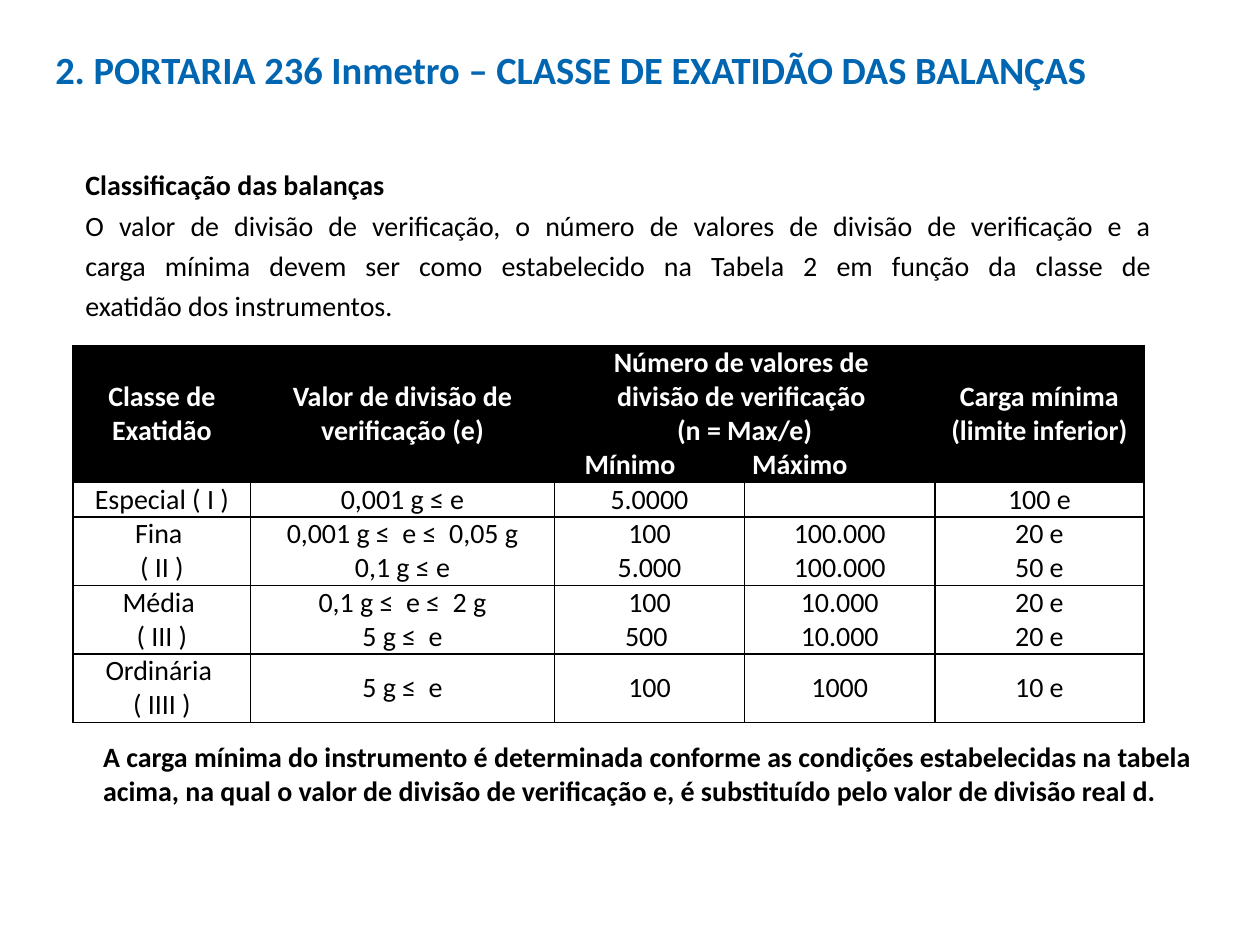
from typing import NamedTuple
from lxml import etree
from pptx import Presentation, util as u
from pptx.dml.color import RGBColor
from pptx.enum import text as t
from pptx.oxml import ns

BLACK, WHITE, BLUE = "000000", "FFFFFF", "0066B2"
LEFT, MID, JUST = t.PP_ALIGN.LEFT, t.PP_ALIGN.CENTER, t.PP_ALIGN.JUSTIFY
TOP, CORE = t.MSO_ANCHOR.TOP, t.MSO_ANCHOR.MIDDLE


class Line(NamedTuple):
    text: str
    bold: bool = False
    hue: str = BLACK
    size: int = 16
    align: t.PP_ALIGN = LEFT
    lead: float = 1.0
    tabs: tuple[float, ...] = ()


class Box(NamedTuple):
    left: float
    top: float
    width: float
    height: float
    anchor: t.MSO_ANCHOR
    lines: list[Line]


def paint(code: str) -> RGBColor:
    return RGBColor.from_string(code)


def add_tabs(para, stops: tuple[float, ...]) -> None:
    group = etree.SubElement(para._p.get_or_add_pPr(), ns.qn("a:tabLst"))
    for stop in stops:
        etree.SubElement(group, ns.qn("a:tab"), pos=str(u.Inches(stop)), algn="l")


def write(frame, lines: list[Line]) -> None:
    for i, line in enumerate(lines):
        para = frame.add_paragraph() if i else frame.paragraphs[0]
        para.text = line.text
        para.alignment, para.line_spacing = line.align, line.lead
        if line.tabs:
            add_tabs(para, line.tabs)
        if not line.text:
            etree.SubElement(para._p, ns.qn("a:endParaRPr"), sz=str(line.size * 100))
        style = {"name": "Calibri", "size": u.Pt(line.size), "bold": line.bold}
        for run in para.runs:
            for key, val in style.items():
                setattr(run.font, key, val)
            run.font.color.rgb = paint(line.hue)


def add_box(slide, box: Box) -> None:
    frame = slide.shapes.add_textbox(*map(u.Inches, box[:4])).text_frame
    frame.word_wrap, frame.vertical_anchor = True, box.anchor
    write(frame, box.lines)


def edge(cell) -> None:
    props = cell._tc.get_or_add_tcPr()
    for i, side in enumerate(("lnL", "lnR", "lnT", "lnB")):
        rule = etree.Element(ns.qn(f"a:{side}"), w=str(u.Pt(1)))
        fill = etree.SubElement(rule, ns.qn("a:solidFill"))
        etree.SubElement(fill, ns.qn("a:srgbClr"), val=BLACK)
        props.insert(i, rule)


def add_grid(slide, rows: list[list[str]], wide: list[float], high: list[float]) -> None:
    area = map(u.Inches, (0.58, 2.74, sum(wide), sum(high)))
    grid = slide.shapes.add_table(len(rows), len(wide), *area).table
    for col, size in zip(grid.columns, wide):
        col.width = u.Inches(size)
    for row, size in zip(grid.rows, high):
        row.height = u.Inches(size)
    grid.cell(0, 2).merge(grid.cell(0, 3))
    look = {
        "vertical_anchor": CORE,
        "margin_left": u.Inches(0.08),
        "margin_right": u.Inches(0.08),
        "margin_top": 0,
        "margin_bottom": 0,
    }
    for r, row in enumerate(rows):
        head = r == 0
        for c, words in enumerate(row):
            cell = grid.cell(r, c)
            for key, val in look.items():
                setattr(cell, key, val)
            if head:
                cell.fill.solid()
                cell.fill.fore_color.rgb = paint(BLACK)
            else:
                cell.fill.background()
            edge(cell)
            lines = [
                Line(part, head, WHITE if head else BLACK,
                     align=LEFT if "\t" in part else MID,
                     tabs=(0.16, 1.49) if "\t" in part else ())
                for part in words.split("\n")
            ]
            write(cell.text_frame, lines)


BOXES = [
    Box(0.58, 1.23, 8.66, 1.42, TOP, [
        Line("Classificação das balanças", True, align=JUST, lead=1.2),
        Line("O valor de divisão de verificação, o número de valores de divisão de verificação e a\n"
             "carga mínima devem ser como estabelecido na Tabela 2 em função da classe de\n"
             "exatidão dos instrumentos.", align=JUST, lead=1.2),
    ]),
    Box(0.34, 0.25, 8.98, 0.65, CORE, [
        Line("2. PORTARIA 236 Inmetro – CLASSE DE EXATIDÃO DAS BALANÇAS", True, BLUE, 22, lead=0.9),
    ]),
    Box(0.72, 5.82, 8.84, 0.64, TOP, [
        Line("A carga mínima do instrumento é determinada conforme as condições estabelecidas "
             "na tabela acima, na qual o valor de divisão de verificação e, é substituído pelo "
             "valor de divisão real d.", True),
    ]),
]
ROWS = [
    ["Classe de Exatidão", "Valor de divisão de verificação (e)",
     "Número de valores de \ndivisão de verificação \n(n = Max/e)\n\tMínimo\tMáximo", "",
     "Carga mínima\n(limite inferior)"],
    ["Especial ( I )", "0,001 g ≤ e", "5.0000", "", "100 e"],
    ["Fina \n( II )", "0,001 g ≤  e ≤  0,05 g\n0,1 g ≤ e", "100\n5.000", "100.000\n100.000", "20 e\n50 e"],
    ["Média \n( III )", "0,1 g ≤  e ≤  2 g\n5 g ≤  e", "100\n500 ", "10.000\n10.000", "20 e\n20 e"],
    ["Ordinária \n( IIII )", "5 g ≤  e", "100", "1000", "10 e"],
]


def main() -> None:
    deck = Presentation()
    deck.slide_width, deck.slide_height = u.Inches(10), u.Inches(7.5)
    slide = deck.slides.add_slide(deck.slide_layouts[6])
    add_grid(slide, ROWS, [1.41, 2.41, 1.51, 1.51, 1.66], [1.09, 0.27, 0.54, 0.54, 0.54])
    for box in BOXES:
        add_box(slide, box)
    deck.save("out.pptx")


if __name__ == "__main__":
    main()
